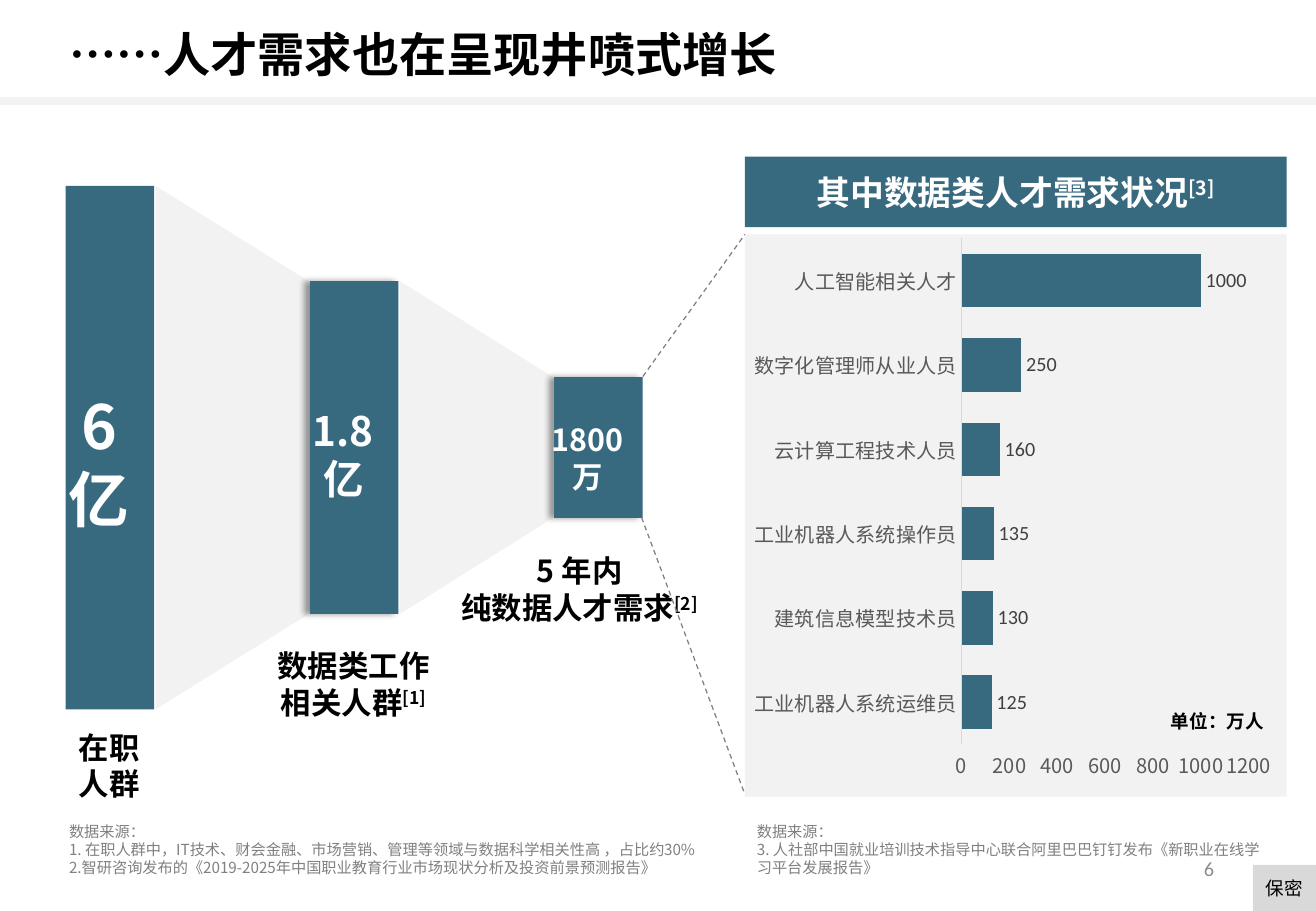
from dataclasses import dataclass
from lxml import etree
from pptx import Presentation
from pptx import util as u
from pptx.chart.data import CategoryChartData
from pptx.dml.color import RGBColor
from pptx.enum import chart as ch
from pptx.enum import dml, shapes, text
from pptx.oxml import parse_xml
from pptx.oxml.ns import nsdecls, qn

PX = 9144  # 100 px to the inch


@dataclass(frozen=True)
class Theme:
    cjk: str = "Noto Sans CJK SC"
    latin: str = "Calibri"
    teal: str = "37697F"
    pale: str = "F2F2F2"
    white: str = "FFFFFF"
    black: str = "000000"
    grey: str = "808080"
    page: str = "8C8C8C"
    tag: str = "D9D9D9"
    axis: str = "595959"
    value: str = "404040"
    title: float = 28
    head: float = 20
    label: float = 18
    unit: float = 11
    note: float = 9
    tick: float = 11.9
    num: float = 12


T = Theme()
MID, LEFT, RIGHT = text.PP_ALIGN.CENTER, text.PP_ALIGN.LEFT, text.PP_ALIGN.RIGHT


def px(*nums):
    return [u.Emu(round(n * PX)) for n in nums]


def rgb(code):
    return RGBColor.from_string(code)


def style(font, size, color, name=T.cjk, bold=False):
    font.size, font.bold, font.name = u.Pt(size), bold, name
    font.color.rgb = rgb(color)


def write(shape, lines, size, color, align=MID, bold=False, name=T.cjk, middle=False):
    """Fill a shape with lines; a line may be a (words, superscript) pair."""
    frame = shape.text_frame
    frame.word_wrap = True
    anchor = text.MSO_ANCHOR
    frame.vertical_anchor = anchor.MIDDLE if middle else anchor.TOP
    for i, line in enumerate(lines):
        para = frame.paragraphs[0] if i == 0 else frame.add_paragraph()
        words, mark = line if isinstance(line, tuple) else (line, None)
        para.add_run().text = words
        if mark:
            sup = para.add_run()
            sup.text = mark
            sup._r.get_or_add_rPr().set("baseline", "30000")
        para.alignment = align
        para.line_spacing = u.Pt(round(size * 1.2, 1))
        style(para.font, size, color, name, bold)
        east = etree.SubElement(para._p.pPr.find(qn("a:defRPr")), qn("a:ea"))
        east.set("typeface", name)


def label(slide, box, lines, size, color, **opts):
    write(slide.shapes.add_textbox(*px(*box)), lines, size, color, **opts)


def block(slide, box, fill, kind=shapes.MSO_SHAPE.RECTANGLE):
    shape = slide.shapes.add_shape(kind, *px(*box))
    shape.shadow.inherit = False
    shape.fill.solid()
    shape.fill.fore_color.rgb = rgb(fill)
    shape.line.fill.background()
    return shape


def rule(slide, ends, color, width, dash=None):
    line = slide.shapes.add_connector(shapes.MSO_CONNECTOR.STRAIGHT, *px(*ends))
    line.line.color.rgb = rgb(color)
    line.line.width = u.Pt(width)
    if dash:
        line.line.dash_style = dash
    etree.SubElement(line._element.spPr, qn("a:effectLst"))


def shade(shape):
    """Soft shadow to the left of a bar."""
    effects = shape._element.spPr.find(qn("a:effectLst"))
    effects.append(parse_xml(
        f'<a:outerShdw {nsdecls("a")} blurRad="50800" dist="38100" dir="10800000">'
        '<a:srgbClr val="000000"><a:alpha val="40000"/></a:srgbClr></a:outerShdw>'))


def frame(slide, box):
    """Title, divider, page number and secrecy tag."""
    x, y, w, h = box
    rule(slide, (x, y + 83, x + w, y + 83), T.pale, 4.5)
    label(slide, (x + 47, y + 16, 911, 53), ["……人才需求也在呈现井喷式增长"],
          T.title, T.black, align=LEFT, bold=True)
    label(slide, (x + 765, y + 695, 244, 40), ["6"], T.num, T.page,
          align=RIGHT, name=T.latin, middle=True)
    tag = block(slide, (x + w - 52, y + h - 38, 52, 38), T.tag)
    tag.text_frame.margin_left = tag.text_frame.margin_right = 0
    write(tag, ["保密"], T.unit, T.black, middle=True)


def funnel(slide, box):
    """Three shrinking bars joined by pale wedges, with captions below."""
    x, y, w, h = box
    wide, pitch = 73, 201
    gap = pitch - wide - 2
    mid = y + h / 2
    # height, amount, amount size, amount top, caption, caption centre and top
    steps = [
        (431, ["6", "亿"], 36, 315, ["在职", "人群"], 90, 595),
        (274, ["1.8", "亿"], 24, 329, ["数据类工作", ("相关人群", "[1]")], 291, 528),
        (116, ["1800", "万"], 18, 342, ["5 年内", ("纯数据人才需求", "[2]")], 477, 450),
    ]
    for i, (tall, amount, size, top, words, centre, low) in enumerate(steps):
        left = x + i * pitch
        bar = block(slide, (left, mid - tall / 2, wide, tall), T.teal)
        if i:
            shade(bar)
        label(slide, (left + wide / 2 - 70, top, 122, 2 * size * 1.67 + 10), amount,
              size, T.white, bold=True)
        label(slide, (centre - 120, low, 240, 57), words, T.label, T.black, bold=True)
        if i < len(steps) - 1:
            core = left + wide + 1 + gap / 2
            wedge = block(slide, (core - tall / 2, mid - gap / 2, tall, gap),
                          T.pale, shapes.MSO_SHAPE.TRAPEZOID)
            wedge.rotation = 90
            wedge.adjustments[0] = (tall - steps[i + 1][0]) / 2 / gap


def demand(slide, box):
    """Headed panel with the bar chart of demand by job."""
    x, y, w, h = box
    block(slide, (x, y + 64, w, h - 64), T.pale)
    for start, end in (((529, 310), y + 64), ((528, 426), y + h - 2)):
        rule(slide, (*start, x, end), T.grey, 0.75, dml.MSO_LINE.DASH)
    bars(slide, (x, y + 58, w, h - 64))
    label(slide, (x + 337, y + 451, 104, 33), ["单位：万人"], T.unit, T.black, bold=True)
    head = block(slide, (x, y, w, 58), T.teal)
    write(head, [("其中数据类人才需求状况", "[3]")], T.head, T.white, bold=True, middle=True)


def bars(slide, box):
    """Horizontal bar chart."""
    data = CategoryChartData()
    data.categories = ["工业机器人系统运维员", "建筑信息模型技术员", "工业机器人系统操作员",
                       "云计算工程技术人员", "数字化管理师从业人员", "人工智能相关人才"]
    data.add_series("Series 1", [125, 130, 135, 160, 250, 1000])
    chart = slide.shapes.add_chart(ch.XL_CHART_TYPE.BAR_CLUSTERED, *px(*box), data).chart
    chart.has_legend = chart.has_title = False
    style(chart.font, 10, T.black, T.latin)
    # Axes
    for axis in (chart.category_axis, chart.value_axis):
        axis.has_major_gridlines = False
        axis.major_tick_mark = axis.minor_tick_mark = ch.XL_TICK_MARK.NONE
        style(axis.tick_labels.font, T.tick, T.axis)
    line = chart.category_axis.format.line
    line.color.rgb, line.width = rgb(T.tag), u.Pt(0.75)
    scale = chart.value_axis
    scale.format.line.fill.background()
    scale.minimum_scale, scale.maximum_scale, scale.major_unit = 0, 1200, 200
    # Bars and values
    plot = chart.plots[0]
    plot.gap_width, plot.overlap, plot.vary_by_categories = 58, 45, False
    fill = plot.series[0].format.fill
    fill.solid()
    fill.fore_color.rgb = rgb(T.teal)
    plot.has_data_labels = True
    tags = plot.data_labels
    tags.show_value = True
    tags.position = ch.XL_LABEL_POSITION.OUTSIDE_END
    style(tags.font, T.tick, T.value, T.latin)
    # Fixed plot area
    area = chart._chartSpace.chart.plotArea
    for old in area.findall(qn("c:layout")):
        area.remove(old)
    places = "".join(f'<c:{k} val="{v}"/>' for k, v in (
        ("layoutTarget", "inner"), ("xMode", "edge"), ("yMode", "edge"),
        ("x", 0.4), ("y", 0.02), ("w", 0.53), ("h", 0.9)))
    area.insert(0, parse_xml(f'<c:layout {nsdecls("c")}><c:manualLayout>{places}'
                             '</c:manualLayout></c:layout>'))


def source(slide, box, notes):
    """Source notes."""
    label(slide, box, ["数据来源：", *notes], T.note, T.grey, align=LEFT)


def main():
    deck = Presentation()
    deck.slide_width, deck.slide_height = px(1083, 750)
    slide = deck.slides.add_slide(deck.slide_layouts[6])
    frame(slide, (0, 0, 1083, 750))
    funnel(slide, (54, 153, 475, 431))
    demand(slide, (613, 129, 446, 527))
    source(slide, (47, 672, 546, 56), [
        "1. 在职人群中，IT技术、财会金融、市场营销、管理等领域与数据科学相关性高 ，占比约30%",
        "2.智研咨询发布的《2019-2025年中国职业教育行业市场现状分析及投资前景预测报告》"])
    source(slide, (613, 672, 438, 56), [
        "3. 人社部中国就业培训技术指导中心联合阿里巴巴钉钉发布《新职业在线学习平台发展报告》"])
    deck.save("out.pptx")


if __name__ == "__main__":
    main()
